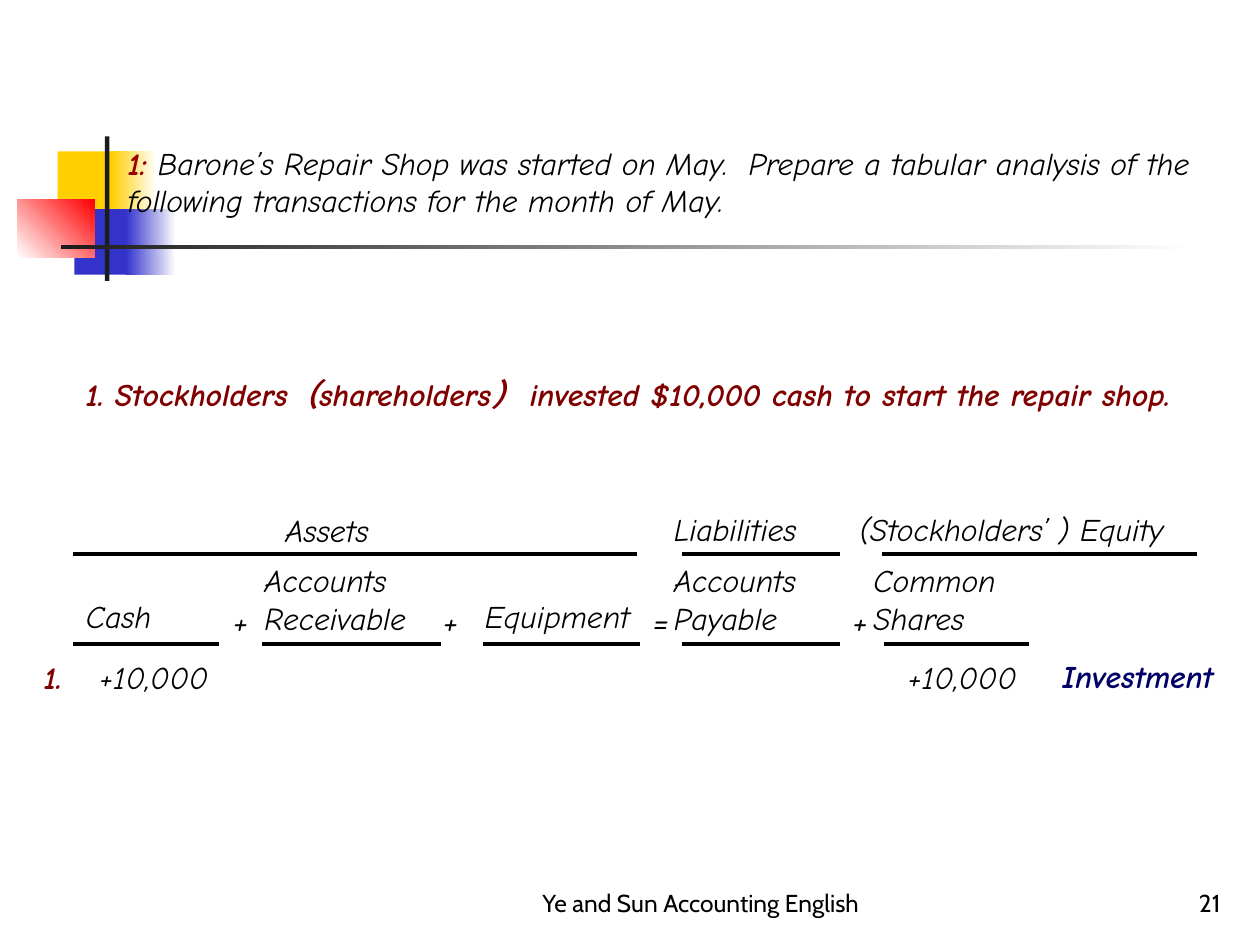
from lxml import etree
from pptx import Presentation
from pptx.dml.color import RGBColor
from pptx.enum.shapes import MSO_CONNECTOR, MSO_SHAPE
from pptx.enum.text import MSO_ANCHOR, PP_ALIGN
from pptx.oxml.ns import qn
from pptx.util import Pt

RECT = MSO_SHAPE.RECTANGLE
STRAIGHT = MSO_CONNECTOR.STRAIGHT
TOP, BOTTOM = MSO_ANCHOR.TOP, MSO_ANCHOR.BOTTOM
LEFT, CENTER, RIGHT = PP_ALIGN.LEFT, PP_ALIGN.CENTER, PP_ALIGN.RIGHT

BLACK = RGBColor(0x00, 0x00, 0x00)
WHITE = RGBColor(0xFF, 0xFF, 0xFF)
YELLOW = RGBColor(0xFF, 0xCF, 0x01)
BLUE = RGBColor(0x33, 0x33, 0xCC)
RED = RGBColor(0xFF, 0x00, 0x00)
CHARCOAL = RGBColor(0x1C, 0x1C, 0x1C)
CRIMSON = RGBColor(0x99, 0x00, 0x00)
MAROON = RGBColor(0x80, 0x00, 0x00)
NAVY = RGBColor(0x00, 0x00, 0x66)


class Deck:
    body_font = "Comic Neue"
    footer_font = "Cabin"
    body_size = 18
    footer_size = 14
    rule_width = 2.25

    def __init__(self, width, height):
        self.prs = Presentation()
        self.prs.slide_width = Pt(width)
        self.prs.slide_height = Pt(height)
        self.s = self.prs.slides.add_slide(self.prs.slide_layouts[6])

    def block(self, x, y, w, h, color, end=None, angle=0):
        sp = self.s.shapes.add_shape(RECT, Pt(x), Pt(y), Pt(w), Pt(h))
        sp.shadow.inherit = False
        sp.line.fill.background()
        if end is None:
            sp.fill.solid()
            sp.fill.fore_color.rgb = color
        else:
            sp.fill.gradient()
            sp.fill.gradient_angle = angle
            for stop, rgb in zip(sp.fill.gradient_stops, (color, end)):
                stop.color.rgb = rgb

    def rule(self, x, y, w):
        sp = self.s.shapes.add_connector(STRAIGHT, Pt(x), Pt(y), Pt(x + w), Pt(y))
        sp.line.color.rgb = BLACK
        sp.line.width = Pt(self.rule_width)
        etree.SubElement(sp._element.spPr, qn("a:effectLst"))

    def text(self, x, y, w, h, runs, size=body_size, font=body_font, italic=True,
             align=LEFT, anchor=TOP, spacing=None):
        tf = self.s.shapes.add_textbox(Pt(x), Pt(y), Pt(w), Pt(h)).text_frame
        tf.word_wrap = True
        tf.vertical_anchor = anchor
        p = tf.paragraphs[0]
        p.alignment = align
        p.line_spacing = spacing
        for words, color, bold in runs:
            r = p.add_run()
            r.text = words
            r.font.name = font
            r.font.size = Pt(size)
            r.font.italic = italic
            r.font.bold = bold
            r.font.color.rgb = color

    def label(self, x, y, w, h, words, color=BLACK, bold=False, **style):
        self.text(x, y, w, h, [(words, color, bold)], **style)

    def footer(self, x, w, words, align):
        self.label(x, 492, w, 36, words, size=self.footer_size,
                   font=self.footer_font, italic=False, align=align, anchor=BOTTOM)


def main():
    deck = Deck(720, 540)

    deck.block(33, 86.5, 34.5, 37.5, YELLOW)
    deck.block(63.5, 86.5, 26, 37.5, YELLOW, WHITE)
    deck.block(42.5, 119.5, 33, 37.5, BLUE)
    deck.block(72, 119.5, 28.5, 37.5, BLUE, WHITE)
    deck.block(10, 114, 44, 33, WHITE, RED, 45)
    deck.block(60, 78, 2.5, 82.5, CHARCOAL)
    deck.block(35, 140, 648, 2.5, CHARCOAL, WHITE)

    deck.text(66, 78.5, 648, 51, [
        ("1: ", CRIMSON, True),
        ("Barone’s Repair Shop was started on May.  Prepare a tabular analysis "
         "of the following transactions for the month of May.", BLACK, False)])
    deck.label(42, 210.5, 648, 51,
               "1. Stockholders（shareholders） invested $10,000 cash to start "
               "the repair shop.", MAROON, True)

    deck.label(156, 294.5, 84, 22, "Assets", spacing=0.7)
    deck.label(378, 288, 114, 29, "Liabilities")
    deck.label(484, 288, 212, 29, "(Stockholders’ ) Equity")
    for x, w in ((42, 322), (390, 90), (504, 180)):
        deck.rule(x, 316.8, w)

    for x, w, words in ((42, 84, "Cash"), (270, 102, "Equipment")):
        deck.label(x, 343.5, w, 22, words, spacing=0.7)
    for x, words in ((144, "Accounts Receivable"), (378, "Accounts Payable"),
                     (492, "Common Shares")):
        deck.label(x, 317, 114, 51, words)
    for x, w in ((42, 83), (150, 102), (276, 90), (390, 90), (505, 83)):
        deck.rule(x, 368, w)
    for x, sign in ((126, "+"), (246, "+"), (366, "="), (480, "+")):
        deck.label(x, 341.5, 30, 29, sign, size=20, spacing=0.9)

    deck.label(18, 375, 36, 27, "1.", MAROON, True, spacing=0.9)
    for x in (42, 504):
        deck.label(x, 375, 84, 27, "+10,000", align=RIGHT, spacing=0.9)
    deck.label(600, 374.5, 120, 27, "Investment", NAVY, True, spacing=0.9)

    deck.footer(554.5, 150, "21", RIGHT)
    deck.footer(288, 228, "Ye and Sun Accounting English ", CENTER)

    deck.prs.save("out.pptx")


if __name__ == "__main__":
    main()
